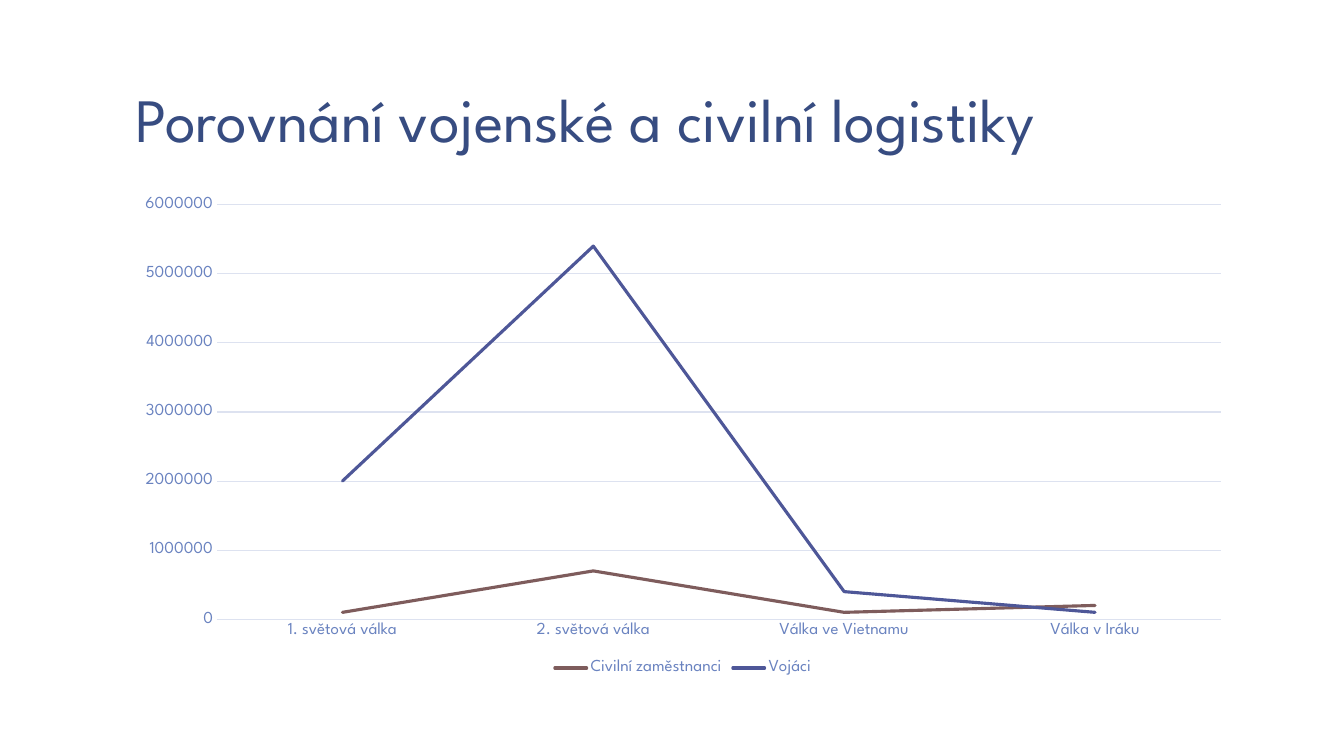
from lxml import etree
from pptx import Presentation, util as u
from pptx.chart.data import CategoryChartData
from pptx.dml.color import RGBColor
from pptx.enum import chart as ch, text

PX = 914400 / 100.8
FONT = "League Spartan"
COLORS = {
    "background": "FFFFFF",
    "title": "374C81",
    "label": "6A83C0",
    "grid": "DDE2F0",
    "civilians": "7E5C5C",
    "soldiers": "4E5798",
}
WARS = ["1. světová válka", "2. světová válka", "Válka ve Vietnamu", "Válka v Iráku"]
STAFF = [
    ("Civilní zaměstnanci", "civilians", [100000, 700000, 100000, 200000]),
    ("Vojáci", "soldiers", [2000000, 5400000, 400000, 100000]),
]


def px(*lengths):
    return [u.Emu(round(length * PX)) for length in lengths]


def color(name):
    return RGBColor.from_string(COLORS[name])


def style_font(font, size, name):
    font.name = FONT
    font.size = u.Pt(size)
    font.color.rgb = color(name)


def style_line(line, width, name):
    line.width = u.Pt(width)
    line.color.rgb = color(name)


def add_title(page, place, words):
    box = page.shapes.add_textbox(*px(*place))
    frame = box.text_frame
    frame.word_wrap = True
    frame.vertical_anchor = text.MSO_ANCHOR.BOTTOM
    frame.margin_left, frame.margin_right, frame.margin_top, frame.margin_bottom = px(13, 13, 7, 7)
    para = frame.paragraphs[0]
    para.text = words
    para.line_spacing = 0.85
    style_font(para.font, 44, "title")


def style_axis(axis):
    axis.major_tick_mark = ch.XL_TICK_MARK.NONE
    axis.minor_tick_mark = ch.XL_TICK_MARK.NONE
    style_font(axis.tick_labels.font, 12, "label")


def add_line_chart(page, place, categories, rows):
    data = CategoryChartData(number_format="General")
    data.categories = categories
    for name, _, values in rows:
        data.add_series(name, values)
    chart = page.shapes.add_chart(ch.XL_CHART_TYPE.LINE, *px(*place), data).chart
    chart.has_title = False
    style_font(chart.font, 10, "title")

    # Axes and gridlines
    style_axis(chart.category_axis)
    style_line(chart.category_axis.format.line, 0.75, "grid")
    values_axis = chart.value_axis
    style_axis(values_axis)
    values_axis.format.line.fill.background()
    values_axis.has_major_gridlines = True
    style_line(values_axis.major_gridlines.format.line, 0.75, "grid")

    # Legend
    chart.has_legend = True
    chart.legend.position = ch.XL_LEGEND_POSITION.BOTTOM
    chart.legend.include_in_layout = False
    style_font(chart.legend.font, 12, "label")

    # Lines with round ends
    chart.plots[0].vary_by_categories = False
    for series, (_, name, _) in zip(chart.plots[0].series, rows):
        series.smooth = False
        series.marker.style = ch.XL_MARKER_STYLE.NONE
        style_line(series.format.line, 2.25, name)
        outline = series.format.line.fill._xPr
        outline.set("cap", "rnd")
        etree.SubElement(outline, outline.tag.replace("}ln", "}round"))


def main():
    deck = Presentation()
    deck.slide_width, deck.slide_height = px(1344, 756)
    page = deck.slides.add_slide(deck.slide_layouts[6])
    page.background.fill.solid()
    page.background.fill.fore_color.rgb = color("background")
    add_title(page, (123, 8, 1120, 154), "Porovnání vojenské a civilní logistiky")
    add_line_chart(page, (123, 187, 1120, 493), WARS, STAFF)
    deck.save("out.pptx")


if __name__ == "__main__":
    main()
